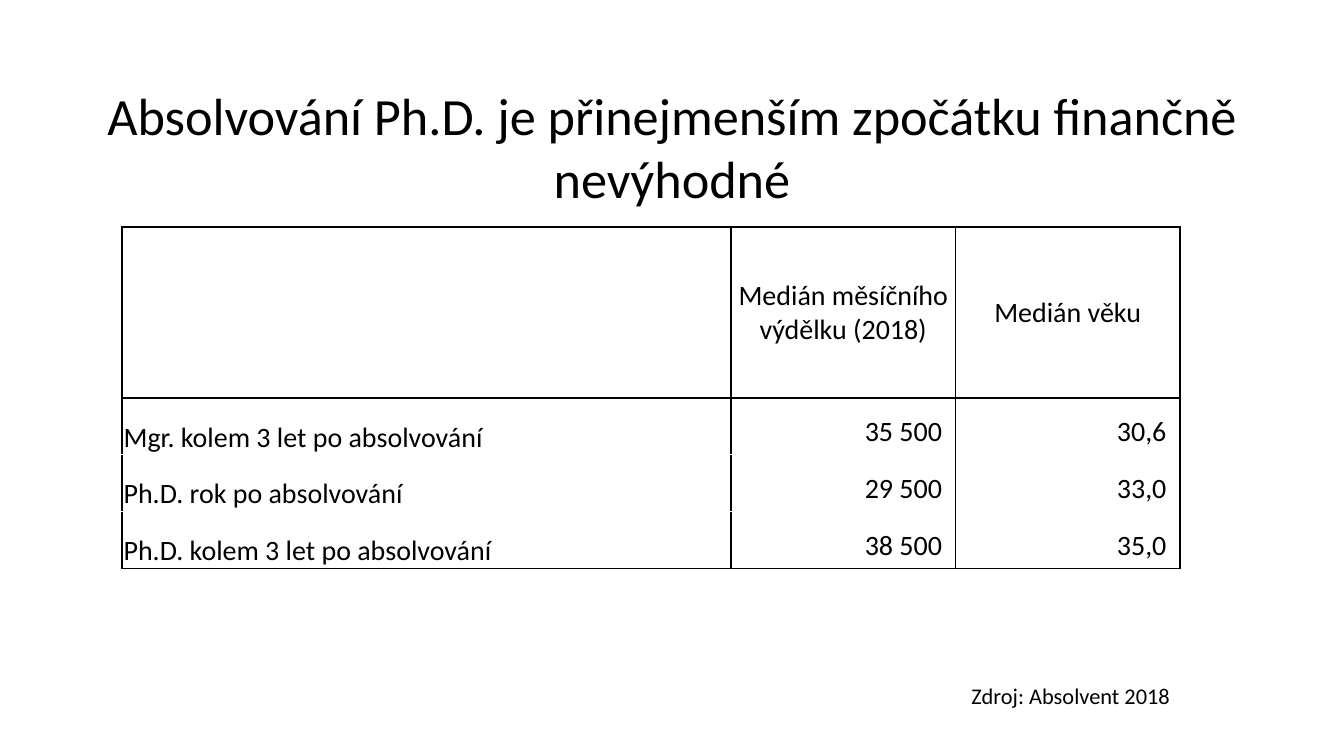
import lxml.etree
import pptx
import pptx.dml.color
import pptx.enum.text
import pptx.oxml.ns
import pptx.util

BLACK = pptx.dml.color.RGBColor(0, 0, 0)
WHITE = pptx.dml.color.RGBColor(255, 255, 255)
ALIGN = pptx.enum.text.PP_ALIGN
ANCHOR = pptx.enum.text.MSO_ANCHOR
inches = pptx.util.Inches

SLIDE_WIDTH = 10
SLIDE_HEIGHT = SLIDE_WIDTH * 9 / 16
TITLE = "Absolvování Ph.D. je přinejmenším zpočátku finančně nevýhodné"
SOURCE = "Zdroj: Absolvent 2018"
ROWS = [
    ("", "Medián měsíčního výdělku (2018)", "Medián věku"),
    ("Mgr. kolem 3 let po absolvování", "35 500", "30,6"),
    ("Ph.D. rok po absolvování", "29 500", "33,0"),
    ("Ph.D. kolem 3 let po absolvování", "38 500", "35,0"),
]
COLUMN_WIDTHS = [4.53, 1.67, 1.67]
HEADER_HEIGHT = 1.27
ROW_HEIGHTS = [HEADER_HEIGHT] + [HEADER_HEIGHT / 3] * 3
TABLE_LEFT, TABLE_TOP = 0.91, 1.69
TIGHT = {"margin_left": 0.01, "margin_top": 0.01, "margin_right": 0.01, "margin_bottom": 0}
ROOMY = {"margin_left": 0.1, "margin_top": 0.04, "margin_right": 0.1, "margin_bottom": 0.04}


def write(frame, text, size, align):
    para = frame.paragraphs[0]
    para.alignment = align
    formats = {"name": "Calibri", "size": pptx.util.Pt(size), "bold": False}
    targets = [para.font]
    if text:
        span = para.add_run()
        span.text = text
        targets.append(span.font)
    for font in targets:
        for name, value in formats.items():
            setattr(font, name, value)
        font.color.rgb = BLACK


def add_text(page, area, text, size, align, anchor):
    box = page.shapes.add_textbox(*map(inches, area))
    box.text_frame.word_wrap = True
    box.text_frame.vertical_anchor = anchor
    write(box.text_frame, text, size, align)


def set_borders(cell, colors):
    properties = cell._tc.get_or_add_tcPr()
    for index, (side, color) in enumerate(zip("LRTB", colors)):
        line = lxml.etree.Element(pptx.oxml.ns.qn(f"a:ln{side}"), w="12700")
        kind = "a:solidFill" if color else "a:noFill"
        fill = lxml.etree.SubElement(line, pptx.oxml.ns.qn(kind))
        if color:
            lxml.etree.SubElement(fill, pptx.oxml.ns.qn("a:srgbClr"), val=str(color))
        properties.insert(index, line)


def edge_color(edge, column):
    if edge in (0, 1, len(ROWS)):
        return BLACK
    return WHITE if column == 0 else None


def add_earnings_table(page):
    area = (TABLE_LEFT, TABLE_TOP, sum(COLUMN_WIDTHS), sum(ROW_HEIGHTS))
    table = page.shapes.add_table(len(ROWS), len(COLUMN_WIDTHS), *map(inches, area)).table
    table.first_row = table.horz_banding = False
    for column, width in zip(table.columns, COLUMN_WIDTHS):
        column.width = inches(width)
    for row, height in zip(table.rows, ROW_HEIGHTS):
        row.height = inches(height)
    for r, values in enumerate(ROWS):
        for c, text in enumerate(values):
            cell = table.cell(r, c)
            cell.fill.background()
            is_number = r > 0 and c > 0
            for name, value in (ROOMY if is_number else TIGHT).items():
                setattr(cell, name, inches(value))
            cell.vertical_anchor = ANCHOR.BOTTOM if r else ANCHOR.MIDDLE
            align = ALIGN.RIGHT if is_number else ALIGN.LEFT if r else ALIGN.CENTER
            write(cell.text_frame, text, 15, align)
            set_borders(cell, (BLACK, BLACK, edge_color(r, c), edge_color(r + 1, c)))


def main():
    deck = pptx.Presentation()
    deck.slide_width, deck.slide_height = inches(SLIDE_WIDTH), inches(SLIDE_HEIGHT)
    page = deck.slides.add_slide(deck.slide_layouts[6])
    add_text(page, (0.5, 0.62, 9, 0.94), TITLE, 28, ALIGN.CENTER, ANCHOR.MIDDLE)
    add_text(page, (7.13, 5.03, 1.92, 0.3), SOURCE, 12, ALIGN.LEFT, ANCHOR.TOP)
    add_earnings_table(page)
    deck.save("out.pptx")


if __name__ == "__main__":
    main()
